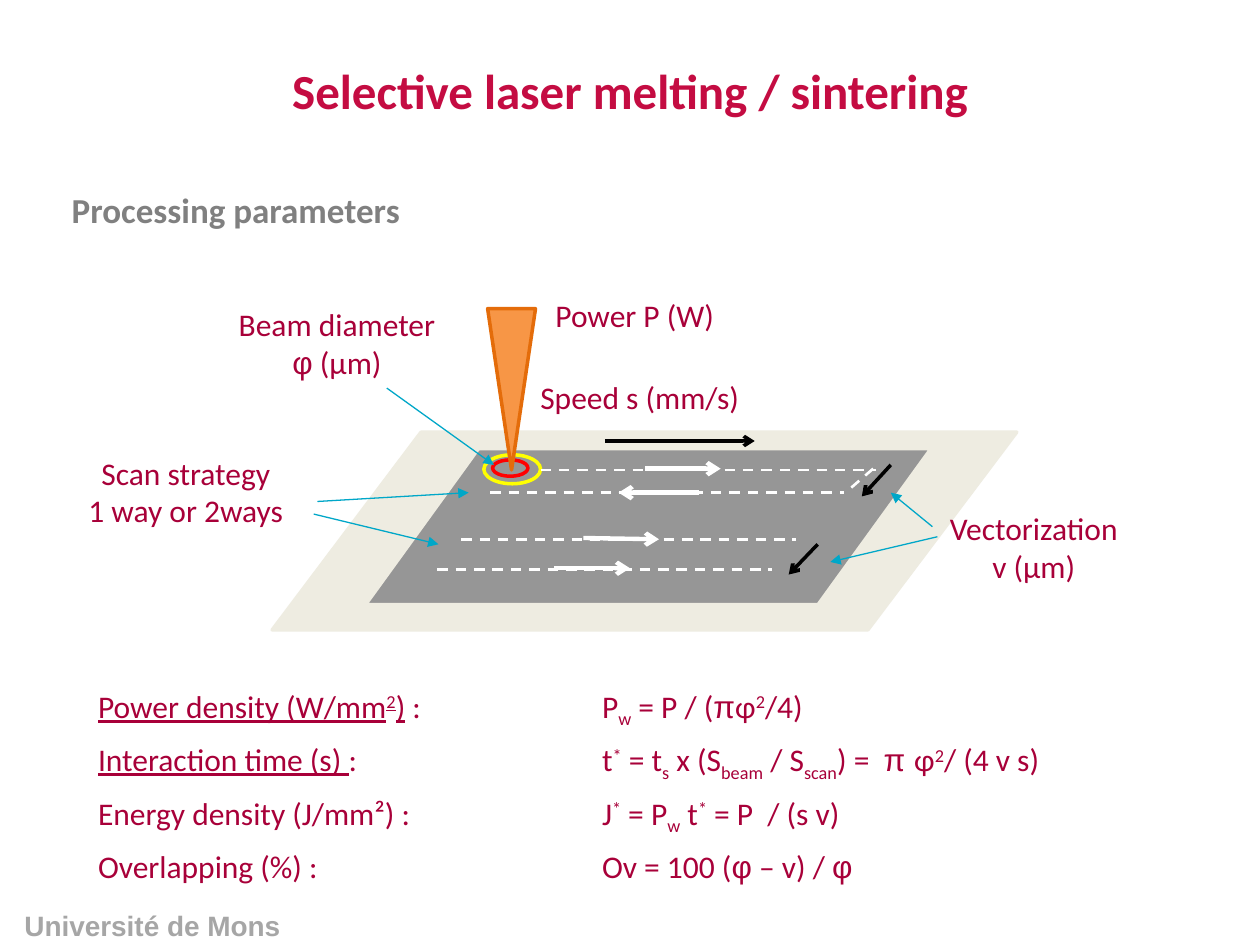
from lxml import etree
from pptx import Presentation
from pptx import util as u
from pptx.dml.color import RGBColor
from pptx.enum import dml, shapes, text
from pptx.oxml.ns import qn

WHITE = RGBColor(0xFF, 0xFF, 0xFF)
BLACK = RGBColor(0x00, 0x00, 0x00)
CRIMSON = RGBColor(0xC4, 0x0C, 0x42)
GARNET = RGBColor(0xA8, 0x00, 0x39)
GREY = RGBColor(0x80, 0x80, 0x80)
FOOTER_GREY = RGBColor(0xA6, 0xA6, 0xA6)
CREAM = RGBColor(0xEE, 0xEC, 0xE1)
POWDER_GREY = RGBColor(0x96, 0x96, 0x96)
RED = RGBColor(0xFF, 0x00, 0x00)
YELLOW = RGBColor(0xFF, 0xFF, 0x00)
ORANGE = RGBColor(0xF7, 0x96, 0x46)
DARK_ORANGE = RGBColor(0xE4, 0x6C, 0x0A)
TEAL = RGBColor(0x00, 0xA7, 0xC8)

SUP = {"baseline": 30}
SUB = {"baseline": -25}
UNDER = {"underline": True}
ARIAL = {"font": "Arial"}


class Board:
    font = "Calibri"
    size = 18
    color = GARNET

    def __init__(self, slide):
        self.slide = slide

    def add_run(self, paragraph, words, font=None, size=None, color=None,
                bold=False, underline=False, baseline=0):
        run = paragraph.add_run()
        run.text = words
        run.font.name = font or self.font
        run.font.size = u.Pt(size or self.size)
        run.font.color.rgb = color or self.color
        run.font.bold = bold
        if underline:
            run.font.underline = True
        if baseline:
            run.font._element.set("baseline", str(baseline * 1000))

    def title(self, box, words, **style):
        heading = self.slide.shapes.title
        heading.left, heading.top, heading.width, heading.height = map(u.Inches, box)
        heading.text_frame.vertical_anchor = text.MSO_ANCHOR.MIDDLE
        paragraph = heading.text_frame.paragraphs[0]
        paragraph.alignment = text.PP_ALIGN.CENTER
        self.add_run(paragraph, words, **style)

    def label(self, box, lines, centred=False, space=0, tab=None, **style):
        frame = self.slide.shapes.add_textbox(*map(u.Inches, box)).text_frame
        frame.word_wrap = True
        for index, line in enumerate(lines):
            paragraph = frame.add_paragraph() if index else frame.paragraphs[0]
            if centred:
                paragraph.alignment = text.PP_ALIGN.CENTER
            if index and space:
                paragraph.space_before = u.Pt(space)
            if tab:
                stops = etree.SubElement(paragraph._p.get_or_add_pPr(), qn("a:tabLst"))
                etree.SubElement(stops, qn("a:tab"), pos=str(u.Inches(tab)), algn="l")
            for words, change in line:
                self.add_run(paragraph, words, **{**style, **change})

    def shape(self, kind, box, line, fill=None):
        body = self.slide.shapes.add_shape(kind, *map(u.Inches, box))
        body.shadow.inherit = False
        if fill is None:
            body.fill.background()
        else:
            body.fill.solid()
            body.fill.fore_color.rgb = fill
        body.line.color.rgb = line
        body.line.width = u.Pt(2)

    def line(self, start, end, color, width, head=None, dashed=False):
        stroke = self.slide.shapes.add_connector(
            shapes.MSO_CONNECTOR.STRAIGHT, *map(u.Inches, (*start, *end)))
        stroke.line.color.rgb = color
        stroke.line.width = u.Pt(width)
        if dashed:
            stroke.line.dash_style = dml.MSO_LINE.DASH
        properties = stroke._element.spPr
        if head:
            etree.SubElement(properties.find(qn("a:ln")), qn("a:tailEnd"), type=head)
        etree.SubElement(properties, qn("a:effectLst"))


def draw_powder_bed(board):
    kind = shapes.MSO_SHAPE
    board.shape(kind.FLOWCHART_DATA, (2.16, 3.43, 5.91, 1.57), CREAM, CREAM)
    board.shape(kind.FLOWCHART_DATA, (2.9, 3.56, 4.49, 1.24), CREAM, POWDER_GREY)
    board.shape(kind.OVAL, (3.91, 3.65, 0.28, 0.13), RED)
    board.shape(kind.OVAL, (3.84, 3.61, 0.45, 0.23), YELLOW)
    board.shape(kind.FLOWCHART_MERGE, (3.87, 2.45, 0.38, 1.28), DARK_ORANGE, ORANGE)


def draw_scan_paths(board):
    tracks = [((4.29, 3.73), (6.95, 3.73)), ((3.89, 3.91), (6.7, 3.91)),
              ((6.93, 3.72), (6.71, 3.91)), ((3.66, 4.28), (6.32, 4.28)),
              ((3.47, 4.52), (6.13, 4.52))]
    directions = [((5.12, 3.72), (5.72, 3.72)), ((5.55, 3.91), (4.91, 3.91)),
                  ((4.63, 4.27), (5.23, 4.28)), ((4.4, 4.51), (5, 4.51))]
    motions = [((7.07, 3.69), (6.84, 3.94)), ((4.8, 3.5), (5.99, 3.5)),
               ((6.49, 4.32), (6.26, 4.56))]
    pointers = [((2.52, 3.98), (3.72, 3.91)), ((2.49, 4.08), (3.48, 4.32)),
                ((7.4, 4.18), (7.07, 3.91)), ((7.44, 4.26), (6.59, 4.46)),
                ((3.07, 3.08), (3.92, 3.69))]
    for track in tracks:
        board.line(*track, WHITE, 1.5, dashed=True)
    for direction in directions:
        board.line(*direction, WHITE, 2.5, "arrow")
    for motion in motions:
        board.line(*motion, BLACK, 2, "arrow")
    for pointer in pointers:
        board.line(*pointer, TEAL, 0.75, "triangle")


def write_labels(board):
    board.label((4.31, 2.3, 3.84, 0.42), [[("Power P (W)", {})]])
    board.label((4.19, 2.95, 5.27, 0.62), [[("Speed s (mm/s)", {})]])
    board.label((7.29, 3.99, 1.83, 0.75),
                [[("Vectorization", {})], [("v (µm)", {})]], centred=True)
    board.label((1.51, 2.37, 2.33, 0.75),
                [[("Beam diameter", {})], [("φ", ARIAL), (" (µm)", {})]], centred=True)
    board.label((0.31, 3.55, 2.33, 0.75),
                [[("Scan strategy", {})], [("1 way or 2ways", {})]], centred=True)


def write_formulas(board):
    power_density = [
        ("Power density (W/mm", UNDER), ("2", {**UNDER, **SUP}), (")", UNDER),
        (" :\tP", {}), ("w", SUB), (" = P / (", {}), ("π", ARIAL), ("φ", {}),
        ("2", SUP), ("/4)", {})]
    interaction_time = [
        ("Interaction time (s) ", UNDER), (":\tt", {}), ("*", SUP), (" = t", {}),
        ("s", SUB), (" x (S", {}), ("beam", SUB), (" / S", {}), ("scan", SUB),
        (") =  ", {}), ("π ", ARIAL), ("φ", {}), ("2", SUP), ("/ (4 v s)", {})]
    energy_density = [
        ("Energy density (J/mm²) :\tJ", {}), ("*", SUP), (" = P", {}), ("w", SUB),
        (" t", {}), ("*", SUP), (" = P  / (s v)", {})]
    overlapping = [
        ("Overlapping (%) :\tOv = 100 (", {}), ("φ", ARIAL), (" – v) / ", {}),
        ("φ", ARIAL)]
    board.label((0.68, 5.4, 8.47, 1.72),
                [power_density, interaction_time, energy_density, overlapping],
                space=6, tab=4)


def main():
    deck = Presentation()
    deck.slide_width, deck.slide_height = u.Inches(10), u.Inches(7.5)
    board = Board(deck.slides.add_slide(deck.slide_layouts[5]))
    board.title((0.5, 0.09, 9, 1.25), "Selective laser melting / sintering",
                size=28, color=CRIMSON, bold=True)
    board.label((0.47, 1.45, 7.08, 0.6), [[("Processing parameters", {})]],
                size=20, color=GREY, bold=True)
    draw_powder_bed(board)
    draw_scan_paths(board)
    write_labels(board)
    write_formulas(board)
    board.label((-0.01, 7.16, 2.44, 0.37), [[("Université de Mons", {})]],
                centred=True, font="Arial", size=16, color=FOOTER_GREY, bold=True)
    deck.save("out.pptx")


if __name__ == "__main__":
    main()
